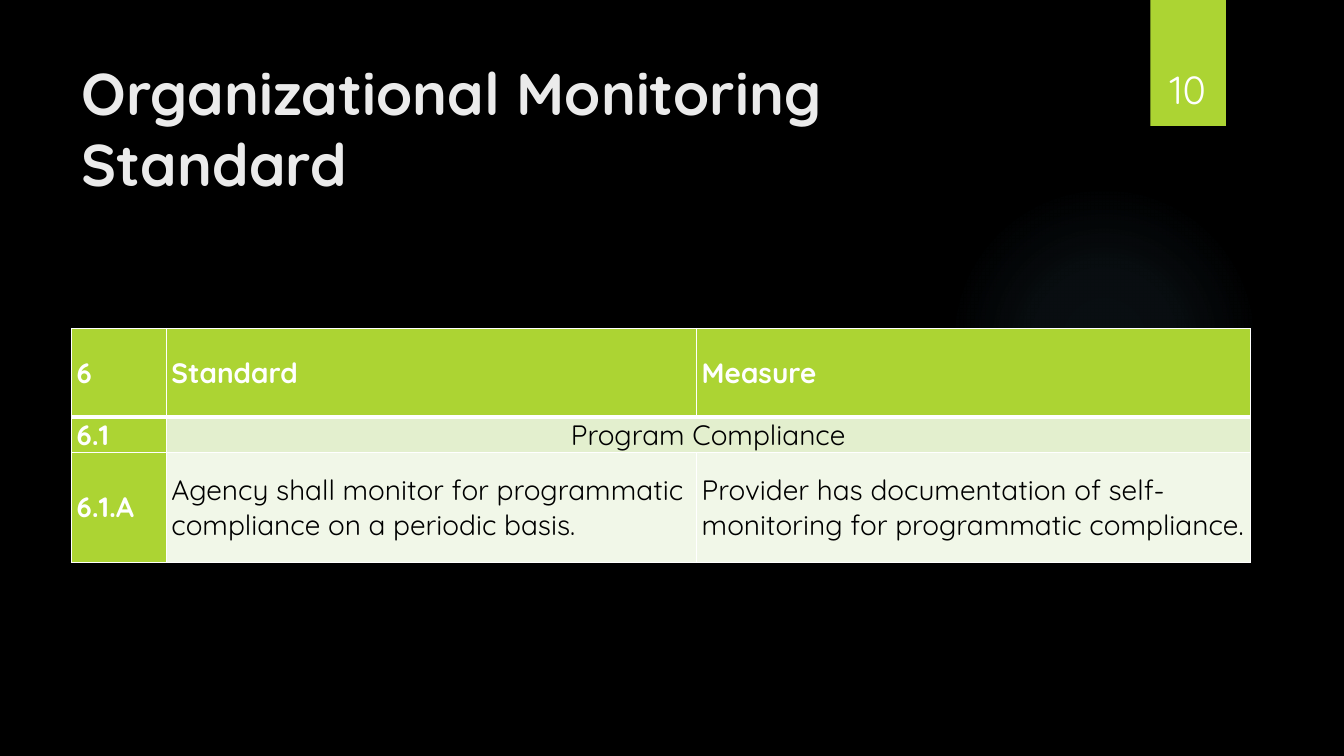
"""Build the Organizational Monitoring Standard slide."""
from lxml.etree import SubElement
from pptx import Presentation
from pptx.dml.color import RGBColor as RGB
from pptx.enum.shapes import MSO_SHAPE as SHAPE
from pptx.enum.text import MSO_ANCHOR as ANCHOR, PP_ALIGN as ALIGN
from pptx.oxml import parse_xml
from pptx.oxml.ns import nsdecls, qn
from pptx.util import Inches, Pt

TITLE = "Organizational Monitoring Standard"
NUMBER = "10"
ROWS = [
    ("6", "Standard", "Measure"),
    ("6.1", "Program Compliance", ""),
    ("6.1.A", "Agency shall monitor for programmatic compliance on a periodic basis.",
     "Provider has documentation of self-monitoring for programmatic compliance."),
]
COL_WIDTHS = (0.94, 5.26, 5.49)
ROW_HEIGHTS = (0.88, 0.34, 1.09)
LEFT, TABLE_TOP = 0.71, 3.26

FONT = "Quicksand"
BLACK = RGB(0, 0, 0)
WHITE = RGB(255, 255, 255)
OFF_WHITE = RGB(0xEB, 0xEB, 0xEB)
GREEN = RGB(0xAC, 0xD4, 0x33)
BANDS = (GREEN, RGB(0xE3, 0xEF, 0xCE), RGB(0xF1, 0xF7, 0xE8))
GLOW = RGB(0x7A, 0xC4, 0xF0)
GLOW_STOPS = ((0, 7), (36, 6), (69, 0))


def box(*lengths):
    return [Inches(v) for v in lengths]


def style(p, size, color, bold=False, align=ALIGN.LEFT):
    p.alignment = align
    for r in p.runs:
        r.font.name, r.font.size, r.font.bold = FONT, Pt(size), bold
        r.font.color.rgb = color


def add_panel(slide, kind, *lengths):
    sp = slide.shapes.add_shape(kind, *box(*lengths))
    sp.shadow.inherit = False
    sp.line.fill.background()
    sp.fill.solid()
    sp.fill.fore_color.rgb = GREEN
    return sp


def add_glow(slide):
    sp = add_panel(slide, SHAPE.OVAL, 9.41, 1.83, 3.08, 3.08)
    stops = "".join(
        f'<a:gs pos="{pos * 1000}"><a:srgbClr val="{GLOW}">'
        f'<a:alpha val="{alpha * 1000}"/></a:srgbClr></a:gs>'
        for pos, alpha in GLOW_STOPS)
    grad = parse_xml(
        f'<a:gradFill {nsdecls("a")}><a:gsLst>{stops}</a:gsLst><a:path path="circle">'
        '<a:fillToRect l="50000" t="50000" r="50000" b="50000"/></a:path></a:gradFill>')
    solid = sp.fill._xPr.find(qn("a:solidFill"))
    solid.getparent().replace(solid, grad)


def set_borders(cell, top, bottom):
    tc_pr = cell._tc.get_or_add_tcPr()
    for side, width in (("L", 1), ("R", 1), ("T", top), ("B", bottom)):
        ln = SubElement(tc_pr, qn(f"a:ln{side}"), w=str(Pt(width)))
        SubElement(SubElement(ln, qn("a:solidFill")), qn("a:srgbClr"), val=str(WHITE))


def add_standards(slide):
    frame = slide.shapes.add_table(
        len(ROWS), len(COL_WIDTHS),
        *box(LEFT, TABLE_TOP, sum(COL_WIDTHS), sum(ROW_HEIGHTS)))
    table = frame.table
    for col, width in zip(table.columns, COL_WIDTHS):
        col.width = Inches(width)
    for row, height in zip(table.rows, ROW_HEIGHTS):
        row.height = Inches(height)
    for i, row in enumerate(ROWS):
        for j, text in enumerate(row):
            cell = table.cell(i, j)
            head = i == 0 or j == 0
            cell.margin_left = cell.margin_right = Inches(0.05)
            cell.margin_top = cell.margin_bottom = 0
            cell.vertical_anchor = ANCHOR.MIDDLE
            set_borders(cell, 3 if i == 1 else 1, 3 if i == 0 else 1)
            cell.fill.solid()
            cell.fill.fore_color.rgb = GREEN if head else BANDS[i]
            cell.text = text
            align = ALIGN.CENTER if i == 1 and j else ALIGN.LEFT
            style(cell.text_frame.paragraphs[0], 20, WHITE if head else BLACK, head, align)
    table.cell(1, 1).merge(table.cell(1, 2))


def main():
    prs = Presentation()
    prs.slide_width, prs.slide_height = box(13.33, 7.5)
    slide = prs.slides.add_slide(prs.slide_layouts[5])
    slide.background.fill.solid()
    slide.background.fill.fore_color.rgb = BLACK

    add_glow(slide)
    add_panel(slide, SHAPE.RECTANGLE, 11.41, 0, 0.75, 1.25)

    title = slide.shapes.title
    title.left, title.top, title.width, title.height = box(LEFT, 0.5, 10.29, 1.53)
    tf = title.text_frame
    tf.text = TITLE
    tf.vertical_anchor = ANCHOR.MIDDLE
    style(tf.paragraphs[0], 42, OFF_WHITE, True)

    add_standards(slide)

    tf = slide.shapes.add_textbox(*box(11.32, 0.32, 0.92, 0.84)).text_frame
    tf.word_wrap = True
    tf.vertical_anchor = ANCHOR.BOTTOM
    tf.text = NUMBER
    style(tf.paragraphs[0], 28, WHITE, align=ALIGN.CENTER)

    prs.save("out.pptx")


if __name__ == "__main__":
    main()
